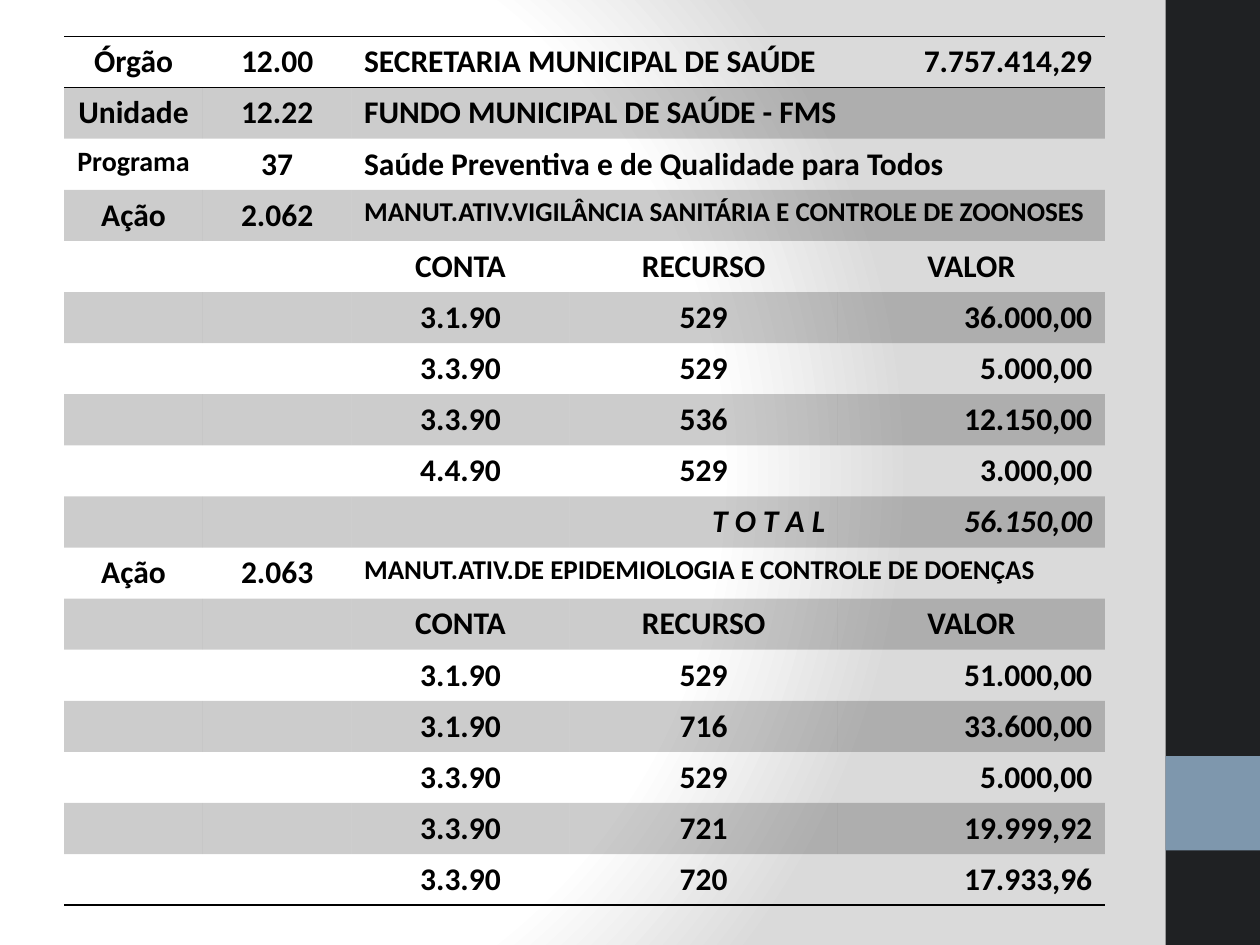
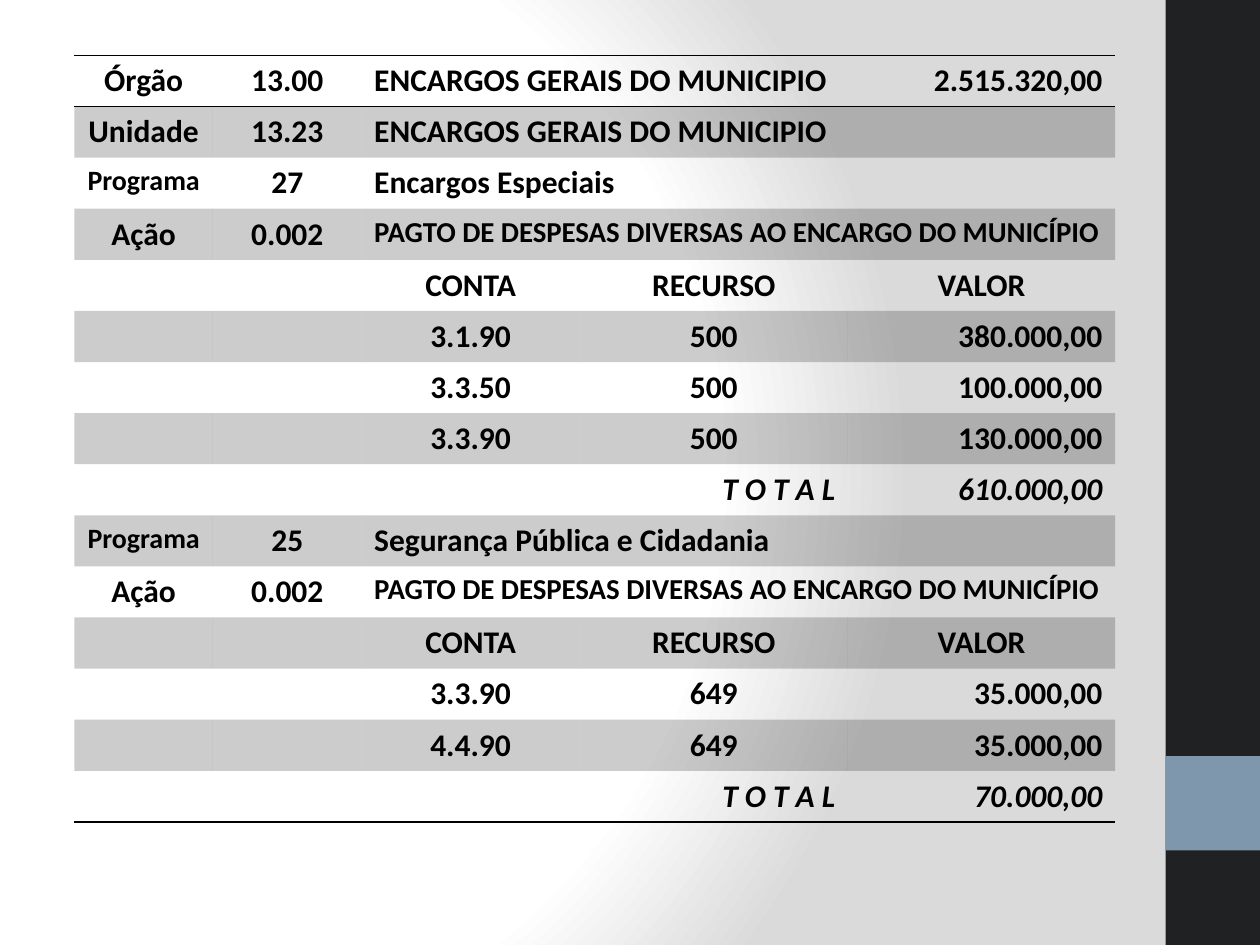
from dataclasses import dataclass
from lxml import etree
from pptx import Presentation, util as u
from pptx.dml.color import RGBColor
from pptx.enum import shapes, text
from pptx.oxml import parse_xml
from pptx.oxml.ns import nsdecls, qn

SLIDES = [
    dict(
        at=(0.51, 0.29), action_size=15.5,
        organ=("Órgão", "12.00", "SECRETARIA MUNICIPAL DE SAÚDE", "7.757.414,29"),
        blocks=[
            dict(
                headings=[
                    ("Unidade", "12.22", "FUNDO MUNICIPAL DE SAÚDE - FMS"),
                    ("Programa", "37", "Saúde Preventiva e de Qualidade para Todos"),
                    ("Ação", "2.062", "MANUT.ATIV.VIGILÂNCIA SANITÁRIA E CONTROLE DE ZOONOSES"),
                ],
                accounts=[
                    ("3.1.90", "529", "36.000,00"),
                    ("3.3.90", "529", "5.000,00"),
                    ("3.3.90", "536", "12.150,00"),
                    ("4.4.90", "529", "3.000,00"),
                ],
                total="56.150,00"),
            dict(
                headings=[("Ação", "2.063", "MANUT.ATIV.DE EPIDEMIOLOGIA E CONTROLE DE DOENÇAS")],
                accounts=[
                    ("3.1.90", "529", "51.000,00"),
                    ("3.1.90", "716", "33.600,00"),
                    ("3.3.90", "529", "5.000,00"),
                    ("3.3.90", "721", "19.999,92"),
                    ("3.3.90", "720", "17.933,96"),
                ],
                total=None),
        ]),
    dict(
        at=(0.59, 0.44), action_size=16.5,
        organ=("Órgão", "13.00", "ENCARGOS GERAIS DO MUNICIPIO", "2.515.320,00"),
        blocks=[
            dict(
                headings=[
                    ("Unidade", "13.23", "ENCARGOS GERAIS DO MUNICIPIO"),
                    ("Programa", "27", "Encargos Especiais"),
                    ("Ação", "0.002", "PAGTO DE DESPESAS DIVERSAS AO ENCARGO DO MUNICÍPIO"),
                ],
                accounts=[
                    ("3.1.90", "500", "380.000,00"),
                    ("3.3.50", "500", "100.000,00"),
                    ("3.3.90", "500", "130.000,00"),
                ],
                total="610.000,00"),
            dict(
                headings=[
                    ("Programa", "25", "Segurança Pública e Cidadania"),
                    ("Ação", "0.002", "PAGTO DE DESPESAS DIVERSAS AO ENCARGO DO MUNICÍPIO"),
                ],
                accounts=[
                    ("3.3.90", "649", "35.000,00"),
                    ("4.4.90", "649", "35.000,00"),
                ],
                total="70.000,00"),
        ]),
]
ACCOUNT_HEADER = ("CONTA", "RECURSO", "VALOR")
TOTAL_LABEL = "T O T A L"

WIDTH, HEIGHT = 10, 7.5
BAND = 0.75
COLUMNS = (1.1, 1.18, 1.73, 2.13, 0.47, 1.65)
ROW = 0.4


@dataclass(frozen=True)
class Theme:
    font: str = "Calibri"
    size: float = 18
    program_size: float = 16
    ink: str = "000000"
    stripe_alpha: int = 20
    rule: float = 1
    side: str = "1F2123"
    accent: str = "7E97AD"
    backdrop: tuple = ((0, "FFFFFF"), (75, "FFFFFF"), (100, "DADADA"))
    plain_table: str = "{2D5ABB26-0587-4C30-8999-92F81FD0307C}"


T = Theme()
LEFT, CENTER, RIGHT = text.PP_ALIGN.LEFT, text.PP_ALIGN.CENTER, text.PP_ALIGN.RIGHT


def set_backdrop(master):
    master.background.fill.gradient()
    old = master.element.find(".//" + qn("p:bgPr")).find(qn("a:gradFill"))
    stops = "".join(f'<a:gs pos="{pos * 1000}"><a:srgbClr val="{color}"/></a:gs>'
                    for pos, color in T.backdrop)
    old.getparent().replace(old, parse_xml(
        f'<a:gradFill {nsdecls("a")} rotWithShape="1"><a:gsLst>{stops}</a:gsLst>'
        '<a:path path="circle"><a:fillToRect l="20000" t="50000" r="100000" b="50000"/>'
        '</a:path></a:gradFill>'))


def add_side_bands(s, master):
    """Draw the right-hand bands and hand them to the master, so all slides share them."""
    for top, height, color in ((0, HEIGHT, T.side), (HEIGHT - 2 * BAND, BAND, T.accent)):
        sp = s.shapes.add_shape(shapes.MSO_SHAPE.RECTANGLE, u.Inches(WIDTH - BAND),
                                u.Inches(top), u.Inches(BAND), u.Inches(height))
        sp.shadow.inherit = False
        sp.fill.solid()
        sp.fill.fore_color.rgb = RGBColor.from_string(color)
        sp.line.fill.background()
        master.shapes.element.append(sp.element)


def write(cell, content, align=CENTER, size=T.size, italic=False):
    p = cell.text_frame.paragraphs[0]
    p.alignment = align
    r = p.add_run()
    r.text = content
    r.font.name, r.font.size = T.font, u.Pt(size)
    r.font.bold, r.font.italic = True, italic
    r.font.color.rgb = RGBColor.from_string(T.ink)


def shade(cell):
    cell.fill.solid()
    cell.fill.fore_color.rgb = RGBColor.from_string(T.ink)
    color = cell.fill._xPr.find(".//" + qn("a:srgbClr"))
    etree.SubElement(color, qn("a:alpha")).set("val", str(T.stripe_alpha * 1000))


def rule(cell, *sides):
    """Rule the given sides, T before B, ahead of the cell's fill."""
    for i, side in enumerate(sides):
        cell._tc.get_or_add_tcPr().insert(i, parse_xml(
            f'<a:ln{side} {nsdecls("a")} w="{u.Pt(T.rule)}"><a:solidFill>'
            f'<a:srgbClr val="{T.ink}"/></a:solidFill></a:ln{side}>'))


def table_rows(data):
    """List each row as (first merged column, last merged column, {column: (text, format)})."""
    label, code, name, value = data["organ"]
    rows = [(2, 4, {0: (label, {}), 1: (code, {}), 2: (name, dict(align=LEFT)),
                    5: (value, dict(align=RIGHT))})]
    for block in data["blocks"]:
        for label, code, name in block["headings"]:
            label_size = T.program_size if label == "Programa" else T.size
            name_size = data["action_size"] if label == "Ação" else T.size
            rows.append((2, 5, {0: (label, dict(size=label_size)), 1: (code, {}),
                                2: (name, dict(align=LEFT, size=name_size))}))
        for account in [ACCOUNT_HEADER] + block["accounts"]:
            align = CENTER if account is ACCOUNT_HEADER else RIGHT
            conta, recurso, valor = account
            rows.append((4, 5, {2: (conta, {}), 3: (recurso, {}),
                                4: (valor, dict(align=align))}))
        if block["total"]:
            style = dict(align=RIGHT, italic=True)
            rows.append((4, 5, {3: (TOTAL_LABEL, style), 4: (block["total"], style)}))
    return rows


def add_budget_table(s, data):
    rows = table_rows(data)
    left, top = data["at"]
    tbl = s.shapes.add_table(len(rows), len(COLUMNS), u.Inches(left), u.Inches(top),
                             u.Inches(sum(COLUMNS)), u.Inches(ROW * len(rows))).table
    tbl.first_row = tbl.horz_banding = False
    tbl._tbl.tblPr.find(qn("a:tableStyleId")).text = T.plain_table
    for column, width in zip(tbl.columns, COLUMNS):
        column.width = u.Inches(width)
    for i, (first, last, contents) in enumerate(rows):
        tbl.rows[i].height = u.Inches(ROW)
        tbl.cell(i, first).merge(tbl.cell(i, last))
        for j, (content, style) in contents.items():
            write(tbl.cell(i, j), content, **style)
        for cell in tbl.rows[i].cells:
            if i % 2:
                shade(cell)
            else:
                cell.fill.background()
            if i == 0:
                rule(cell, "T", "B")
            elif i == len(rows) - 1:
                rule(cell, "B")


def main():
    prs = Presentation()
    prs.slide_width, prs.slide_height = u.Inches(WIDTH), u.Inches(HEIGHT)
    blank = prs.slide_layouts.get_by_name("Blank")
    set_backdrop(prs.slide_master)
    for i, data in enumerate(SLIDES):
        s = prs.slides.add_slide(blank)
        if i == 0:
            add_side_bands(s, prs.slide_master)
        add_budget_table(s, data)
    prs.save("out.pptx")


if __name__ == "__main__":
    main()
